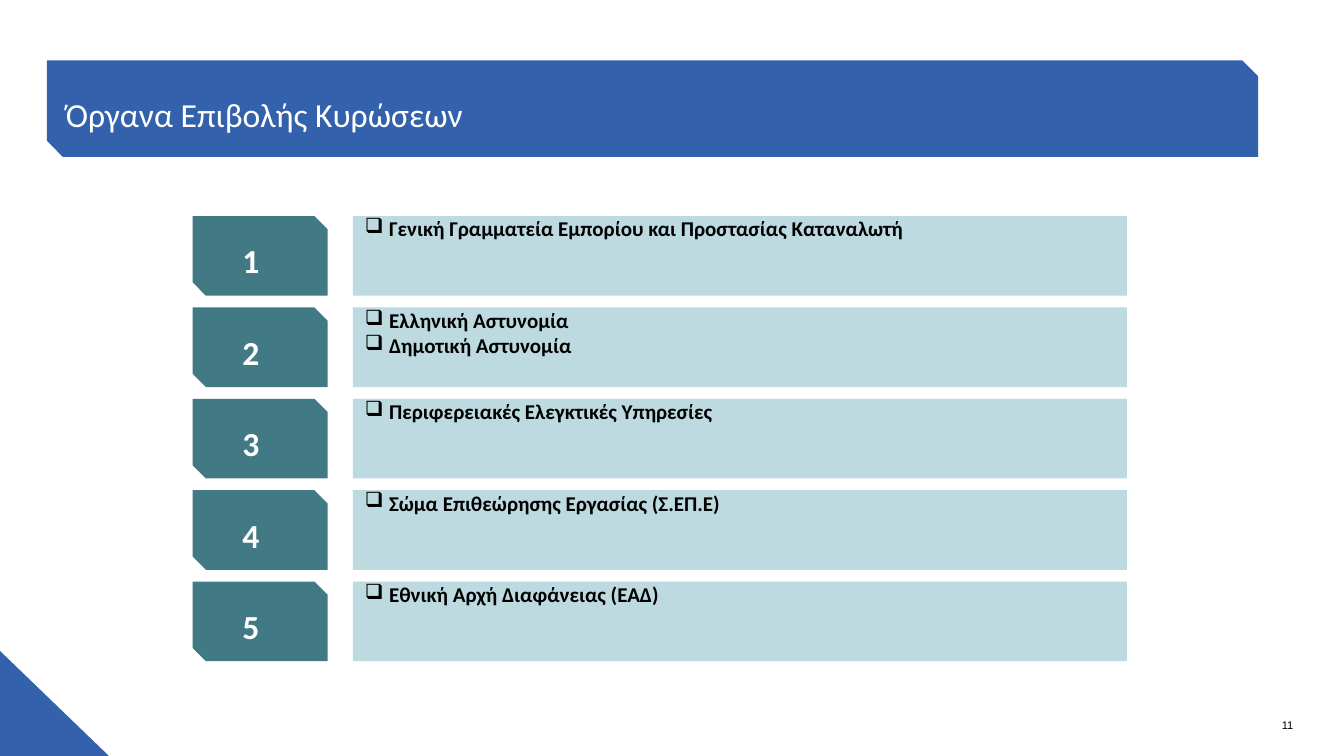
from dataclasses import dataclass

from lxml.etree import SubElement
from pptx import Presentation
from pptx.dml.color import RGBColor
from pptx.enum.shapes import MSO_SHAPE
from pptx.enum.text import MSO_ANCHOR, PP_ALIGN
from pptx.oxml.ns import qn
from pptx.shapes.autoshape import Shape
from pptx.slide import Slide
from pptx.text.text import TextFrame
from pptx.util import Pt


@dataclass(frozen=True)
class Theme:
    blue: RGBColor = RGBColor(0x34, 0x61, 0xAB)
    teal: RGBColor = RGBColor(0x41, 0x7A, 0x85)
    pale: RGBColor = RGBColor(0xBC, 0xDA, 0xDF)
    white: RGBColor = RGBColor(0xFF, 0xFF, 0xFF)
    black: RGBColor = RGBColor(0, 0, 0)
    font: str = "Calibri"
    number_font: str = "Arial"
    heading_size: float = 24
    body_size: float = 15
    page_size: float = 8


@dataclass(frozen=True)
class Box:
    left: float
    top: float
    width: float
    height: float

    def lengths(self) -> list[Pt]:
        return [Pt(value) for value in (self.left, self.top, self.width, self.height)]


@dataclass(frozen=True)
class Authority:
    number: int
    lines: tuple[str, ...]


THEME = Theme()
AUTHORITIES = (
    Authority(1, ("Γενική Γραμματεία Εμπορίου και Προστασίας Καταναλωτή",)),
    Authority(2, ("Ελληνική Αστυνομία", "Δημοτική Αστυνομία")),
    Authority(3, ("Περιφερειακές Ελεγκτικές Υπηρεσίες",)),
    Authority(4, ("Σώμα Επιθεώρησης Εργασίας (Σ.ΕΠ.Ε)",)),
    Authority(5, ("Εθνική Αρχή Διαφάνειας (ΕΑΔ)",)),
)
FIRST_ROW_TOP = 154.3
ROW_PITCH = 65.27
ROW_HEIGHT = 56.9
BULLET_INDENT = 25.9
BULLET_HANGING = 17.2


def paint(shape: Shape, color: RGBColor) -> None:
    shape.shadow.inherit = False
    shape.fill.solid()
    shape.fill.fore_color.rgb = color
    shape.line.fill.background()


def draw_outline(slide: Slide, points: list[tuple[float, float]], color: RGBColor) -> None:
    corners = [(Pt(x), Pt(y)) for x, y in points]
    builder = slide.shapes.build_freeform(*corners[0])
    builder.add_line_segments(corners[1:], close=True)
    paint(builder.convert_to_shape(), color)


def draw_snipped_box(slide: Slide, box: Box, snip: float, color: RGBColor) -> None:
    """Draw a box with its top right and bottom left corners cut off."""
    right, bottom = box.left + box.width, box.top + box.height
    draw_outline(slide, [
        (right - snip, box.top), (box.left, box.top), (box.left, bottom - snip),
        (box.left + snip, bottom), (right, bottom), (right, box.top + snip),
    ], color)


def add_bullet(paragraph) -> None:
    properties = paragraph._p.get_or_add_pPr()
    properties.set("marL", str(Pt(BULLET_INDENT)))
    properties.set("indent", str(-Pt(BULLET_HANGING)))
    SubElement(properties, qn("a:buChar"), char="❑")
    tabs = SubElement(properties, qn("a:tabLst"))
    SubElement(tabs, qn("a:tab"), pos=str(Pt(BULLET_INDENT)), algn="l")


def write(frame: TextFrame, lines: tuple[str, ...], color: RGBColor,
          bulleted: bool = False, **font_format) -> None:
    frame_format = {
        "margin_left": 0, "margin_top": 0, "margin_right": 0, "margin_bottom": 0,
        "word_wrap": True, "vertical_anchor": MSO_ANCHOR.TOP,
    }
    for name, value in frame_format.items():
        setattr(frame, name, value)
    for index, line in enumerate(lines):
        paragraph = frame.add_paragraph() if index else frame.paragraphs[0]
        paragraph.alignment = PP_ALIGN.LEFT
        if bulleted:
            add_bullet(paragraph)
        run = paragraph.add_run()
        run.text = line
        for name, value in font_format.items():
            setattr(run.font, name, value)
        run.font.color.rgb = color


def add_label(slide: Slide, box: Box, text: str, color: RGBColor, **font_format) -> None:
    label = slide.shapes.add_textbox(*box.lengths())
    write(label.text_frame, (text,), color, **font_format)


def draw_authority(slide: Slide, authority: Authority, top: float) -> None:
    panel_box = Box(252, top, 553, ROW_HEIGHT)
    panel = slide.shapes.add_shape(MSO_SHAPE.RECTANGLE, *panel_box.lengths())
    paint(panel, THEME.pale)
    write(panel.text_frame, authority.lines, THEME.black, bulleted=True,
          name=THEME.font, size=Pt(THEME.body_size), bold=True)
    draw_snipped_box(slide, Box(137.6, top, 96.5, ROW_HEIGHT), 9.5, THEME.teal)
    add_label(slide, Box(173.2, top + 17.4, 14.4, 26), str(authority.number), THEME.white,
              name=THEME.font, size=Pt(THEME.heading_size), bold=True)


def main() -> None:
    presentation = Presentation()
    presentation.slide_width, presentation.slide_height = Pt(960), Pt(540)
    slide = presentation.slides.add_slide(presentation.slide_layouts[6])

    draw_outline(slide, [(0, 465), (0, 540), (77.8, 540)], THEME.blue)
    draw_snipped_box(slide, Box(33.5, 43.1, 865.1, 69), 11.4, THEME.blue)
    add_label(slide, Box(47, 67, 866, 26), "Όργανα Επιβολής Κυρώσεων", THEME.white,
              name=THEME.font, size=Pt(THEME.heading_size))
    for row, authority in enumerate(AUTHORITIES):
        draw_authority(slide, authority, FIRST_ROW_TOP + row * ROW_PITCH)
    add_label(slide, Box(915.6, 512.8, 10.8, 10), "11", THEME.black,
              name=THEME.number_font, size=Pt(THEME.page_size))

    presentation.save("out.pptx")


if __name__ == "__main__":
    main()
